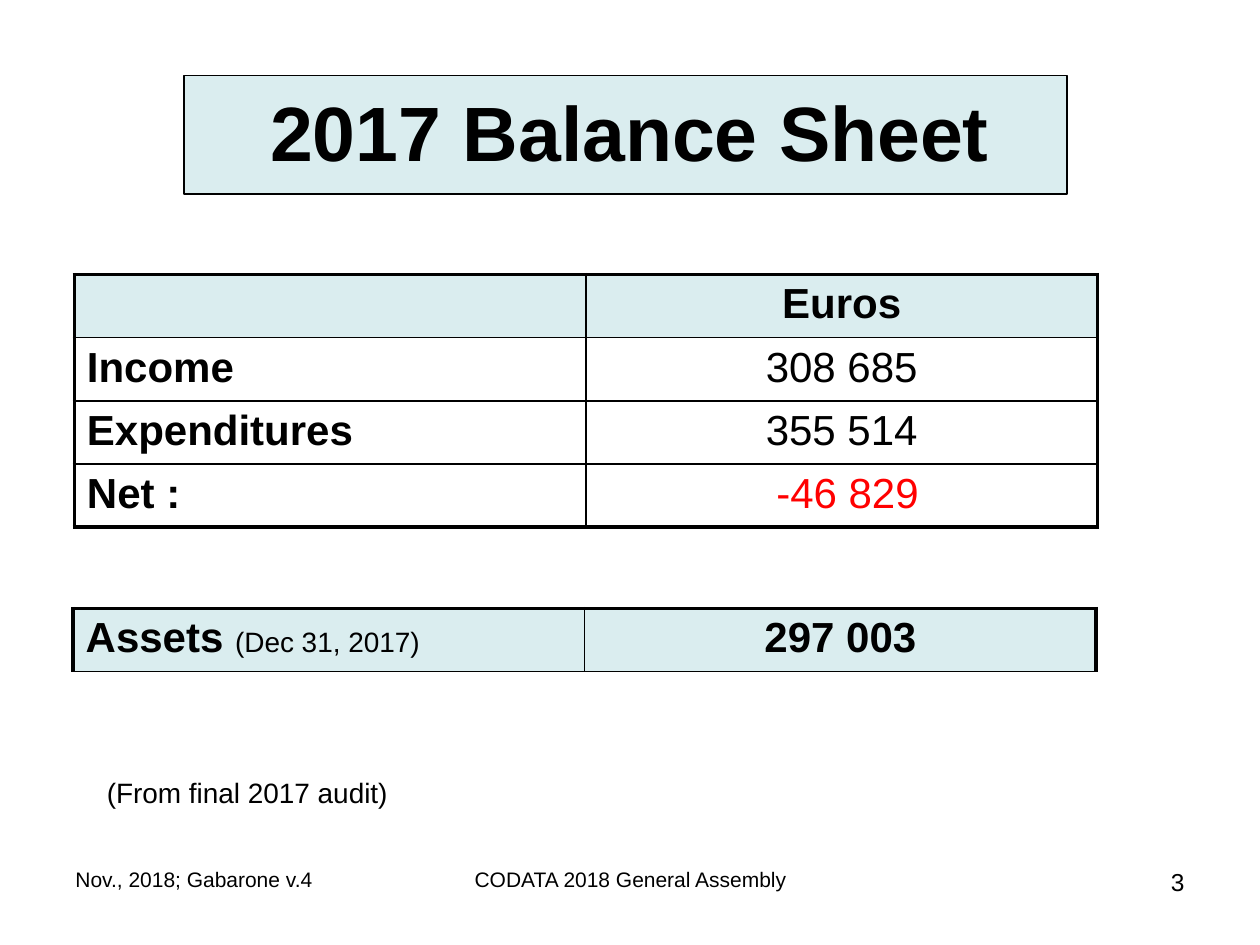
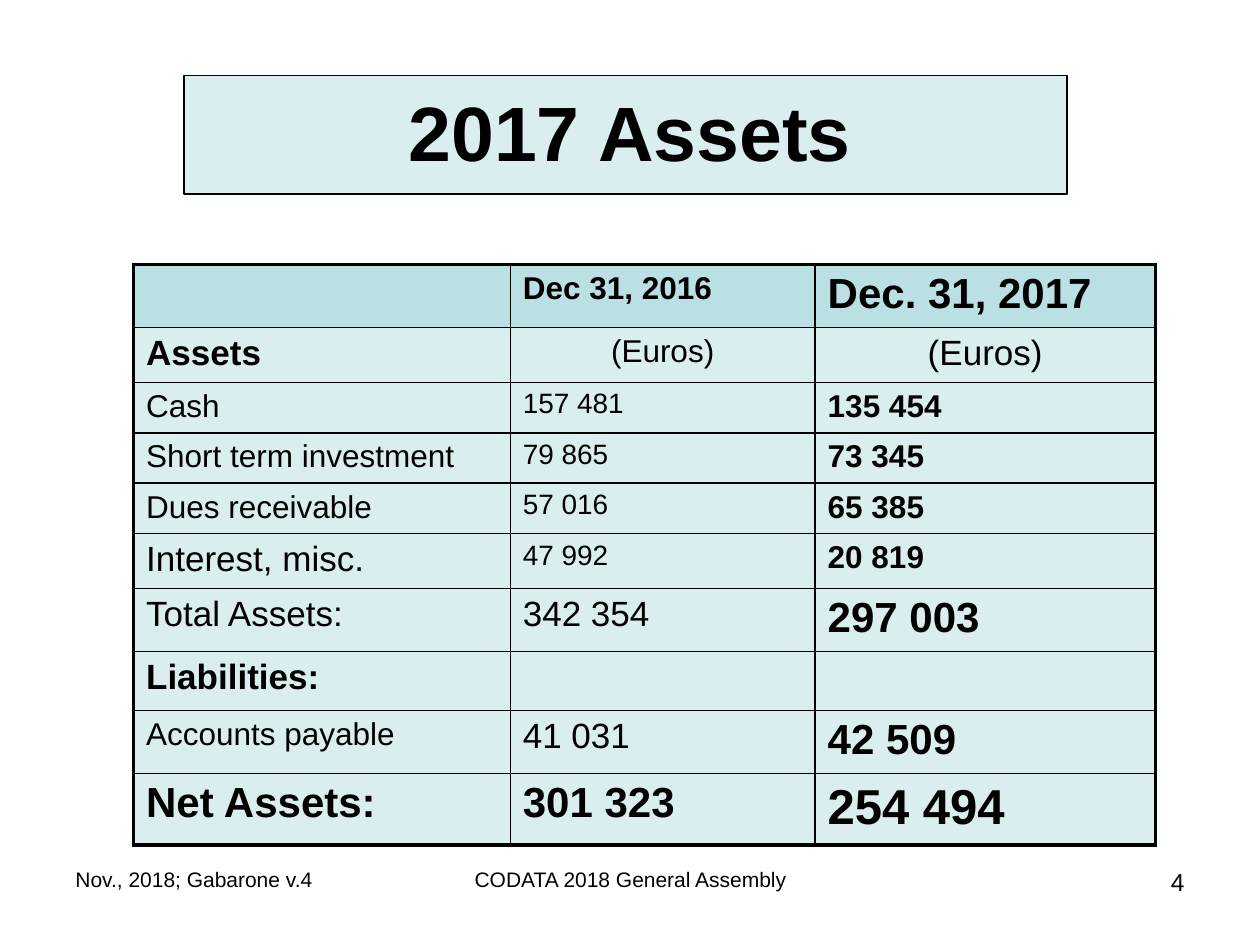
from lxml.etree import SubElement
from pptx import Presentation
from pptx.dml.color import RGBColor
from pptx.enum.shapes import MSO_SHAPE as Shape
from pptx.enum.text import MSO_ANCHOR as Anchor, PP_ALIGN as Align
from pptx.oxml import parse_xml
from pptx.oxml.ns import nsdecls, qn
from pptx.util import Inches, Pt

COLORS = {
    "ink": "000000",
    "loss": "FF0000",
    "pale": "DAEDEF",
    "header": "BBE0E3",
}
FONT = "Arial"
THIN, THICK = 1, 2.25
TITLE_BAND = (1.46, 0.6, 7.01, 0.94)
TITLE_BOX = (1.38, 0.6, 7.24, 0.87)
FOOTER_TOP, FOOTER_HEIGHT = 6.83, 0.52


def color(name):
    return RGBColor.from_string(COLORS[name])


def write(frame, text, size=24, bold=False, ink="ink", align=Align.LEFT):
    """Add a formatted run to the first paragraph of a text frame."""
    paragraph = frame.paragraphs[0]
    paragraph.alignment = align
    run = paragraph.add_run()
    run.text = text
    run.font.name = FONT
    run.font.size = Pt(size)
    run.font.bold = bold
    run.font.color.rgb = color(ink)


def add_text(slide, box, text, anchor=Anchor.TOP, wrap=True, **style):
    frame = slide.shapes.add_textbox(*map(Inches, box)).text_frame
    frame.word_wrap = wrap
    frame.vertical_anchor = anchor
    write(frame, text, **style)


def add_title(slide, text):
    band = slide.shapes.add_shape(Shape.RECTANGLE, *map(Inches, TITLE_BAND))
    band.shadow.inherit = False
    band.fill.solid()
    band.fill.fore_color.rgb = color("pale")
    band.line.color.rgb = color("ink")
    band.line.width = Pt(0.75)
    add_text(slide, TITLE_BOX, text, anchor=Anchor.MIDDLE,
             size=44, bold=True, align=Align.CENTER)


def add_footer(slide, number):
    parts = [
        (0.5, 2.61, "Nov., 2018; Gabarone v.4", 12, Align.LEFT),
        (3.42, 3.17, "CODATA 2018 General Assembly", 12, Align.CENTER),
        (7.17, 2.33, str(number), 14, Align.RIGHT),
    ]
    for left, width, text, size, align in parts:
        add_text(slide, (left, FOOTER_TOP, width, FOOTER_HEIGHT), text,
                 size=size, align=align)


def set_borders(cell, widths):
    """Draw the cell edges; widths maps L, R, T and B to points."""
    properties = cell._tc.get_or_add_tcPr()
    for index, (side, width) in enumerate(widths.items()):
        line = parse_xml(f'<a:ln{side} {nsdecls("a")} w="{Pt(width)}"/>')
        fill = SubElement(line, qn("a:solidFill"))
        SubElement(fill, qn("a:srgbClr")).set("val", COLORS["ink"])
        properties.insert(index, line)


def add_table(slide, left, top, columns, heights, fills, bottom=THICK):
    """Add an empty table with a thick frame and one fill per row."""
    graphic = slide.shapes.add_table(
        len(heights), len(columns), Inches(left), Inches(top),
        Inches(sum(columns)), Inches(sum(heights)))
    table = graphic.table
    table.horz_banding = False
    table.first_row = False
    for column, width in zip(table.columns, columns):
        column.width = Inches(width)
    last_row, last_column = len(heights) - 1, len(columns) - 1
    for r, (height, fill) in enumerate(zip(heights, fills)):
        table.rows[r].height = Inches(height)
        for c in range(len(columns)):
            cell = table.cell(r, c)
            if fill:
                cell.fill.solid()
                cell.fill.fore_color.rgb = color(fill)
            else:
                cell.fill.background()
            set_borders(cell, {
                "L": THICK if c == 0 else THIN,
                "R": THICK if c == last_column else THIN,
                "T": THICK if r == 0 else THIN,
                "B": bottom if r == last_row else THIN,
            })
    return table


def build_balance_slide(slide):
    add_title(slide, "2017 Balance Sheet")
    columns = [4.06, 4.06]

    # Income and expenditures
    rows = [
        ("", "Euros", True, "ink"),
        ("Income", "308 685", False, "ink"),
        ("Expenditures", "355 514", False, "ink"),
        ("Net :", " -46 829", False, "loss"),
    ]
    table = add_table(slide, 0.59, 2.18, columns, [0.47] * len(rows),
                      ["pale", None, None, None])
    for r, (label, amount, bold, ink) in enumerate(rows):
        if label:
            write(table.cell(r, 0).text_frame, label, bold=True)
        write(table.cell(r, 1).text_frame, amount, bold=bold, ink=ink,
              align=Align.CENTER)

    # Assets at the end of the year
    assets = add_table(slide, 0.58, 4.83, columns, [0.5], ["pale"], bottom=THIN)
    label = assets.cell(0, 0).text_frame
    write(label, "Assets ", bold=True)
    write(label, "(Dec 31, 2017)", size=16)
    write(assets.cell(0, 1).text_frame, "297 003", bold=True,
          align=Align.CENTER)

    add_text(slide, (0.75, 6.11, 2.46, 0.37), "(From final 2017 audit)",
             wrap=False, size=16)
    add_footer(slide, 3)


def build_assets_slide(slide):
    add_title(slide, "2017 Assets")

    # Row height, then text, size and bold for each cell
    rows = [
        (0.47, ("", 24, True), ("Dec 31, 2016", 18, True), ("Dec. 31, 2017", 24, True)),
        (0.41, ("Assets", 20, True), ("(Euros)", 18, False), ("(Euros)", 20, False)),
        (0.38, ("Cash", 18, False), ("157 481", 16, False), ("135 454", 18, True)),
        (0.38, ("Short term investment", 18, False), ("79 865", 16, False), ("73 345", 18, True)),
        (0.38, ("Dues receivable", 18, False), ("57 016", 16, False), ("65 385", 18, True)),
        (0.41, ("Interest, misc.", 20, False), ("47 992", 16, False), ("20 819", 18, True)),
        (0.47, ("Total Assets:", 20, False), ("342 354", 20, False), ("297 003", 24, True)),
        (0.47, ("Liabilities:", 20, True), ("", 20, False), ("", 24, True)),
        (0.47, ("Accounts payable", 18, False), ("41 031", 20, False), ("42 509", 24, True)),
        (0.53, ("Net Assets:", 24, True), ("301 323", 24, True), ("254 494", 28, True)),
    ]
    heights = [row[0] for row in rows]
    fills = ["header"] + ["pale"] * (len(rows) - 1)
    table = add_table(slide, 1.06, 2.1, [2.99, 2.42, 2.7], heights, fills)
    for r, (_, *cells) in enumerate(rows):
        for c, (text, size, bold) in enumerate(cells):
            if text:
                align = Align.CENTER if text == "(Euros)" else Align.LEFT
                write(table.cell(r, c).text_frame, text, size=size, bold=bold,
                      align=align)
    add_footer(slide, 4)


def main():
    presentation = Presentation()
    presentation.slide_width = Inches(10)
    presentation.slide_height = Inches(7.5)
    blank = presentation.slide_layouts[6]
    for build in (build_balance_slide, build_assets_slide):
        build(presentation.slides.add_slide(blank))
    presentation.save("out.pptx")


if __name__ == "__main__":
    main()
